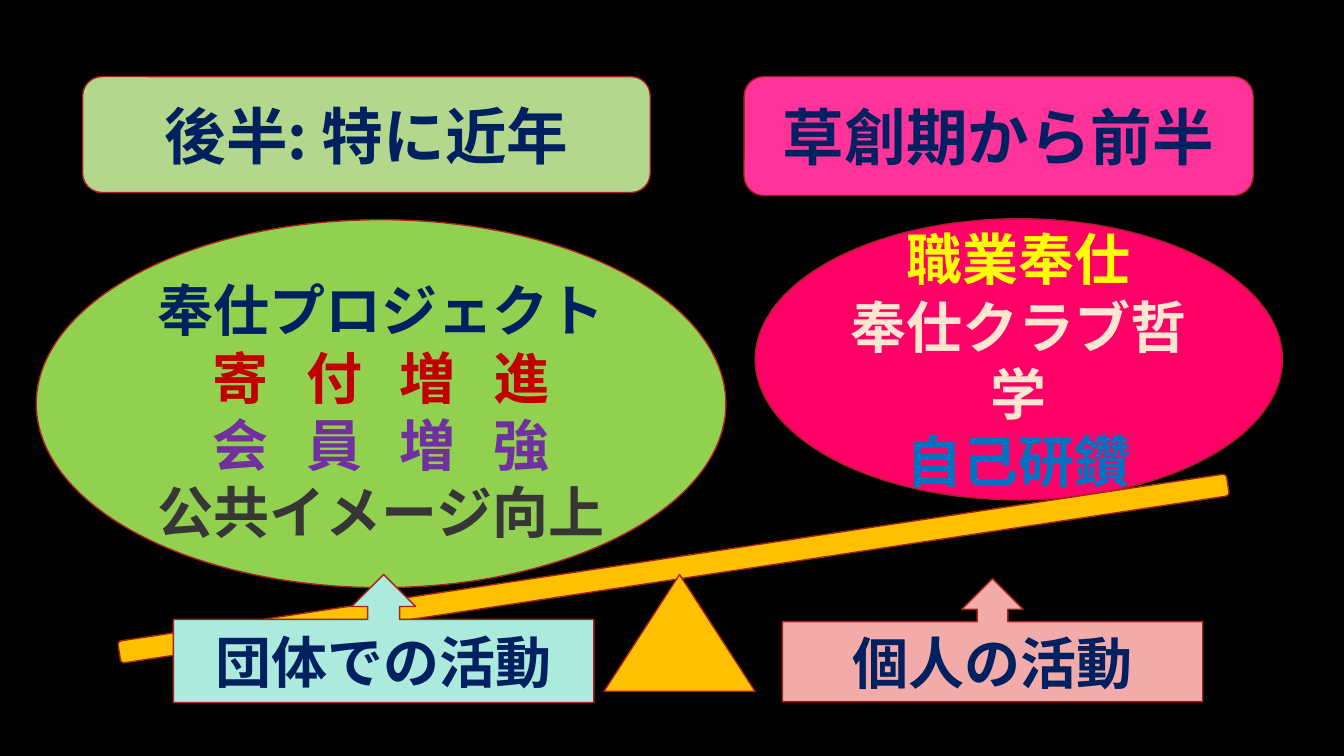
from dataclasses import dataclass

from lxml import etree
from pptx import Presentation
from pptx import util as u
from pptx.dml.color import RGBColor
from pptx.enum import shapes, text
from pptx.oxml import ns

PX = 9144  # EMU per px, 100 px to the inch
CJK = "Noto Sans CJK JP"
NAVY, GOLD, EDGE = "002060", "FFC000", "A5221E"
KIND = shapes.MSO_SHAPE


@dataclass
class Line:
    words: str
    hue: str = NAVY
    gap: int = 0  # points between letters


@dataclass
class Part:
    kind: KIND
    box: tuple[int, int, int, int]
    fill: str
    lines: tuple[Line, ...] = ()
    size: int = 40
    face: str = CJK
    drop: int = 5  # top inset in px
    turn: float = 0


PARTS = [
    # Headings
    Part(KIND.ROUNDED_RECTANGLE, (82, 76, 563, 115), "B3D78D",
         (Line("後半: 特に近年"),), size=44),
    Part(KIND.ROUNDED_RECTANGLE, (738, 76, 505, 118), "FF3399",
         (Line("草創期から前半"),), size=44),
    # Weights on the seesaw
    Part(KIND.OVAL, (36, 218, 684, 365), "92D050",
         (Line("奉仕プロジェクト"),
          Line("寄付増進", "C00000", 27),
          Line("会員増強", "7030A0", 27),
          Line("公共イメージ向上", "363636")), drop=18),
    Part(KIND.OVAL, (749, 217, 523, 279), "FF0066",
         (Line("職業奉仕", "FFFF00"),
          Line("奉仕クラブ哲学", "FFE6D1"),
          Line("自己研鑽", "0070C0"))),
    # Seesaw: plank and pivot
    Part(KIND.ROUNDED_RECTANGLE, (112, 553, 1112, 22), GOLD, turn=351.4),
    Part(KIND.ISOSCELES_TRIANGLE, (599, 570, 150, 116), GOLD),
    # Callouts
    Part(KIND.UP_ARROW_CALLOUT, (172, 570, 417, 127), "ACEADD",
         (Line("団体での活動"),)),
    Part(KIND.UP_ARROW_CALLOUT, (776, 574, 417, 122), "F2ABA9",
         (Line("個人の活動"),), face="Arial"),
]


def tint(code: str) -> RGBColor:
    return RGBColor.from_string(code)


def write(para, line: Line, part: Part) -> None:
    """Fill a paragraph; the last letter takes no gap, so the line stays centred."""
    para.alignment = text.PP_ALIGN.CENTER
    chunks = [(line.words, 0)]
    if line.gap:
        chunks = [(line.words[:-1], line.gap), (line.words[-1], 0)]
    for words, gap in chunks:
        run = para.add_run()
        run.text = words
        font = run.font
        font.size, font.bold, font.name = u.Pt(part.size), True, part.face
        font.color.rgb = tint(line.hue)
        props = run._r.get_or_add_rPr()
        etree.SubElement(props, ns.qn("a:ea")).set("typeface", CJK)
        if gap:
            props.set("spc", str(gap * 100))


def draw(slide, part: Part) -> None:
    shape = slide.shapes.add_shape(part.kind, *(n * PX for n in part.box))
    shape.shadow.inherit = False
    shape.rotation = part.turn
    shape.fill.solid()
    shape.fill.fore_color.rgb = tint(part.fill)
    shape.line.color.rgb = tint(EDGE)
    shape.line.width = u.Pt(1)
    frame = shape.text_frame
    frame.word_wrap = True
    frame.vertical_anchor = text.MSO_ANCHOR.MIDDLE
    frame.margin_top = part.drop * PX
    for i, line in enumerate(part.lines):
        write(frame.add_paragraph() if i else frame.paragraphs[0], line, part)


def main() -> None:
    deck = Presentation()
    deck.slide_width, deck.slide_height = 1333 * PX, 750 * PX
    slide = deck.slides.add_slide(deck.slide_layouts[6])
    back = slide.background.fill
    back.solid()
    back.fore_color.rgb = tint("000000")
    for part in PARTS:
        draw(slide, part)
    deck.save("out.pptx")


if __name__ == "__main__":
    main()
